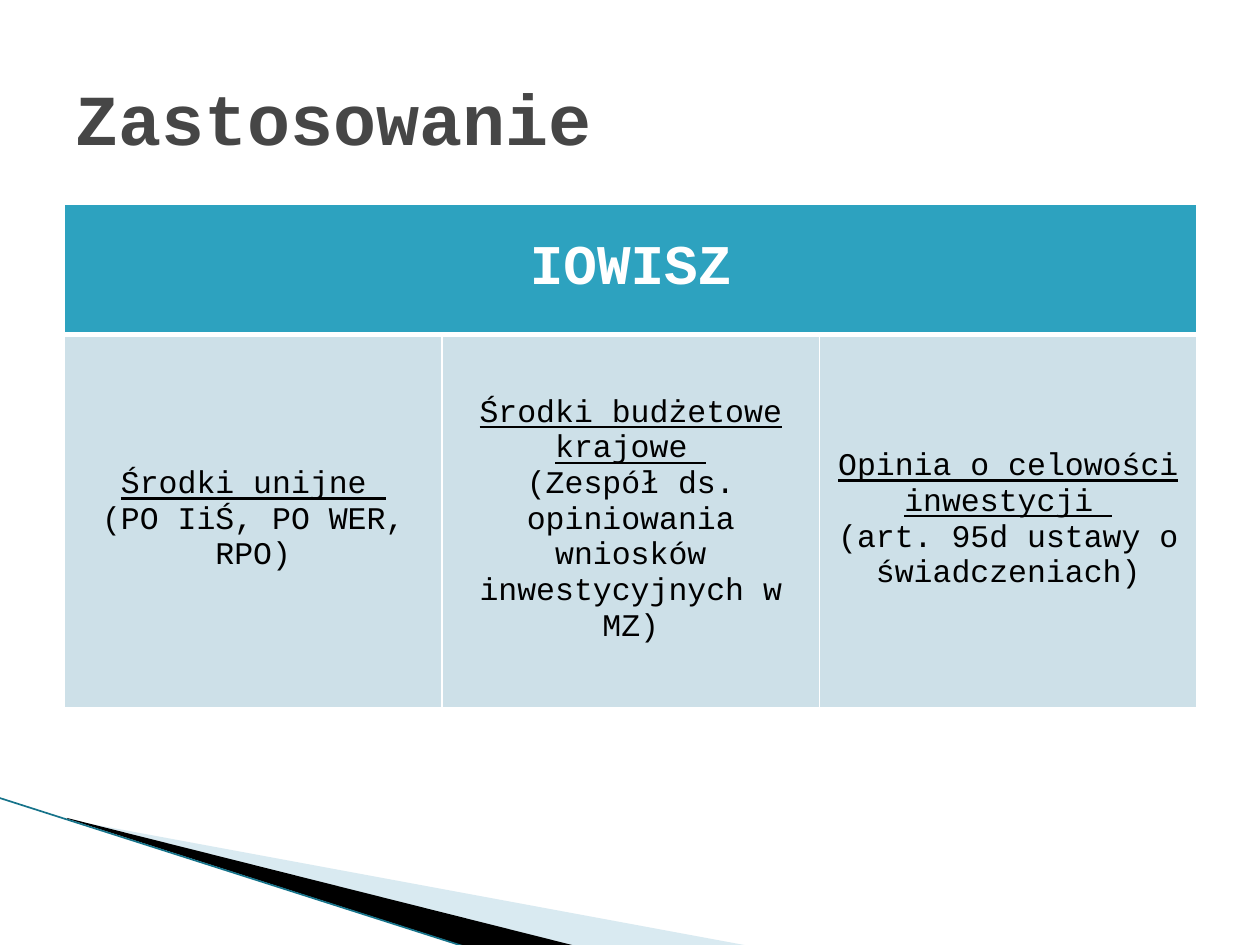
from lxml import etree
from pptx import Presentation
from pptx import util as u
from pptx.dml import color
from pptx.enum import shapes, text
from pptx.oxml import ns

FONT = "Courier New"
WHITE, BLACK, TEAL, PALE = "FFFFFF", "000000", "2DA2BF", "CDE0E8"
TITLE = "Zastosowanie"
HEADING = "IOWISZ"
USES = [
    ("Środki unijne ", "(PO IiŚ, PO WER, RPO)"),
    ("Środki budżetowe krajowe ",
     "(Zespół ds. opiniowania wniosków inwestycyjnych w MZ)"),
    ("Opinia o celowości inwestycji ", "(art. 95d ustawy o świadczeniach)"),
]
# Corner points in cm, fill, opacity in percent
WEDGES = [
    ([(1.4, 16.53), (15.11, 19.07), (11.58, 19.07), (1.4, 16.51)], "A0CBDC", 40),
    ([(1.35, 16.49), (11.61, 19.07), (9.45, 19.1), (1.37, 16.51)], BLACK, 100),
]
ROW_HEIGHTS = (2.62, 7.52)
COLUMN_WIDTH = 7.61


def rgb(value):
    return color.RGBColor.from_string(value)


def paint(fill, value):
    fill.solid()
    fill.fore_color.rgb = rgb(value)


def add_span(para, content, size, value, bold=False, underline=False):
    span = para.add_run()
    span.text = content
    font = span.font
    font.name, font.size, font.bold = FONT, u.Pt(size), bold
    font.underline = underline
    font.color.rgb = rgb(value)


def add_wedge(page, points, value, opacity):
    corners = [(u.Cm(x), u.Cm(y)) for x, y in points]
    builder = page.shapes.build_freeform(*corners[0])
    builder.add_line_segments(corners[1:], close=True)
    wedge = builder.convert_to_shape()
    wedge.shadow.inherit = False
    wedge.line.fill.background()
    paint(wedge.fill, value)
    if opacity < 100:
        tint = wedge.fill._xPr.find(".//" + ns.qn("a:srgbClr"))
        etree.SubElement(tint, ns.qn("a:alpha"), val=str(opacity * 1000))


def style_cell(cell, value, bottom=1):
    """Set white borders, then the fill, which must follow them in the XML."""
    properties = cell._tc.get_or_add_tcPr()
    for side, width in (("L", 1), ("R", 1), ("T", 1), ("B", bottom)):
        edge = etree.SubElement(properties, ns.qn("a:ln" + side), w=str(u.Pt(width)))
        solid = etree.SubElement(edge, ns.qn("a:solidFill"))
        etree.SubElement(solid, ns.qn("a:srgbClr"), val=WHITE)
    paint(cell.fill, value)
    cell.vertical_anchor = text.MSO_ANCHOR.MIDDLE


def add_uses_table(page):
    table = page.shapes.add_table(
        2, len(USES), u.Cm(1.3), u.Cm(4.12),
        u.Cm(COLUMN_WIDTH * len(USES)), u.Cm(sum(ROW_HEIGHTS))).table
    for row, height in zip(table.rows, ROW_HEIGHTS):
        row.height = u.Cm(height)
    for column in table.columns:
        column.width = u.Cm(COLUMN_WIDTH)

    heading = table.cell(0, 0)
    heading.merge(table.cell(0, len(USES) - 1))
    for cell in table.rows[0].cells:
        style_cell(cell, TEAL, bottom=3)
    para = heading.text_frame.paragraphs[0]
    para.alignment = text.PP_ALIGN.CENTER
    add_span(para, HEADING, 32, WHITE, bold=True)

    for cell, (name, detail) in zip(table.rows[1].cells, USES):
        style_cell(cell, PALE)
        frame = cell.text_frame
        for para, content, underline in (
                (frame.paragraphs[0], name, True),
                (frame.add_paragraph(), detail, False)):
            para.alignment = text.PP_ALIGN.CENTER
            add_span(para, content, 18, BLACK, underline=underline)


def main():
    deck = Presentation()
    deck.slide_width, deck.slide_height = u.Cm(25.4), u.Cm(19.05)
    page = deck.slides.add_slide(deck.slide_layouts[6])

    for wedge in WEDGES:
        add_wedge(page, *wedge)
    edge = page.shapes.add_connector(
        shapes.MSO_CONNECTOR.STRAIGHT,
        u.Cm(-0.03), u.Cm(16.08), u.Cm(9.42), u.Cm(19.1))
    edge.line.width = u.Pt(0.95)
    edge.line.color.rgb = rgb("16738A")
    etree.SubElement(edge._element.spPr, ns.qn("a:effectLst"))

    add_uses_table(page)

    box = page.shapes.add_textbox(u.Cm(1.27), u.Cm(0.76), u.Cm(22.86), u.Cm(3.18))
    frame = box.text_frame
    frame.word_wrap = True
    frame.vertical_anchor = text.MSO_ANCHOR.MIDDLE
    add_span(frame.paragraphs[0], TITLE, 41, "464646", bold=True)

    deck.save("out.pptx")


if __name__ == "__main__":
    main()
